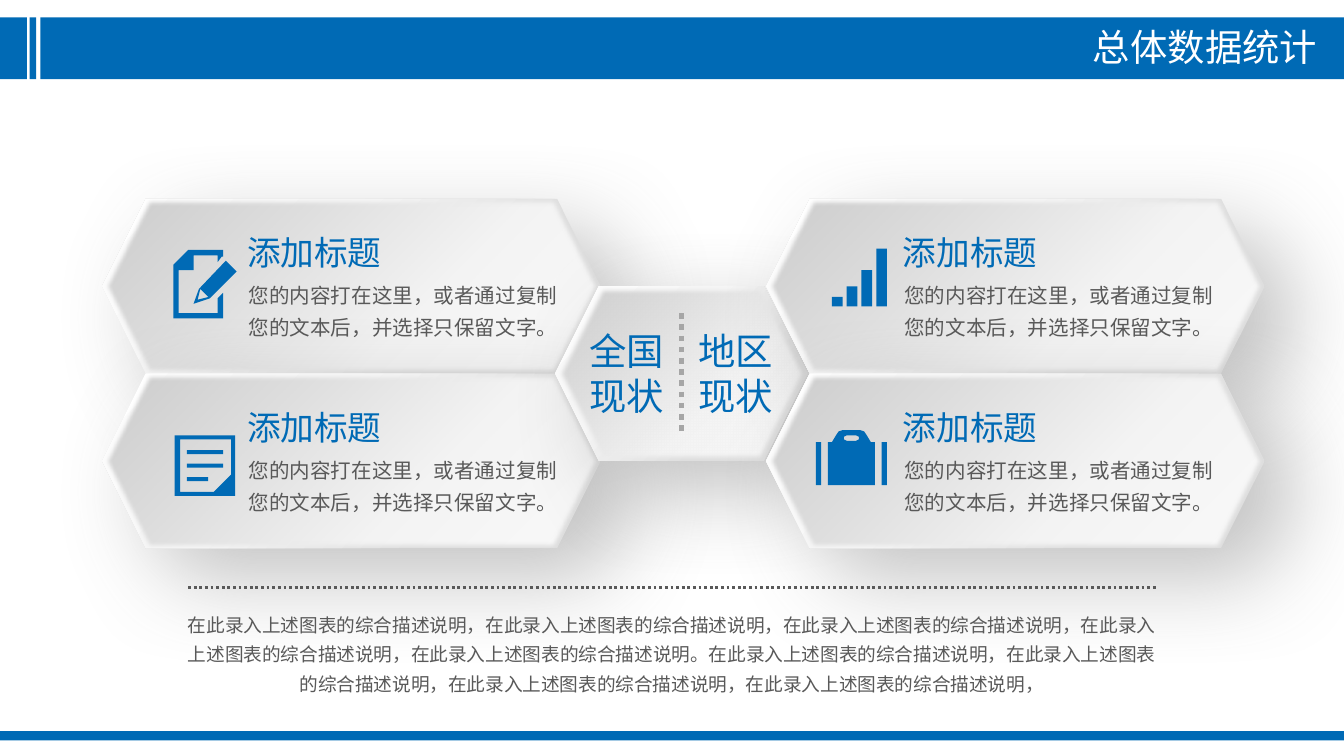
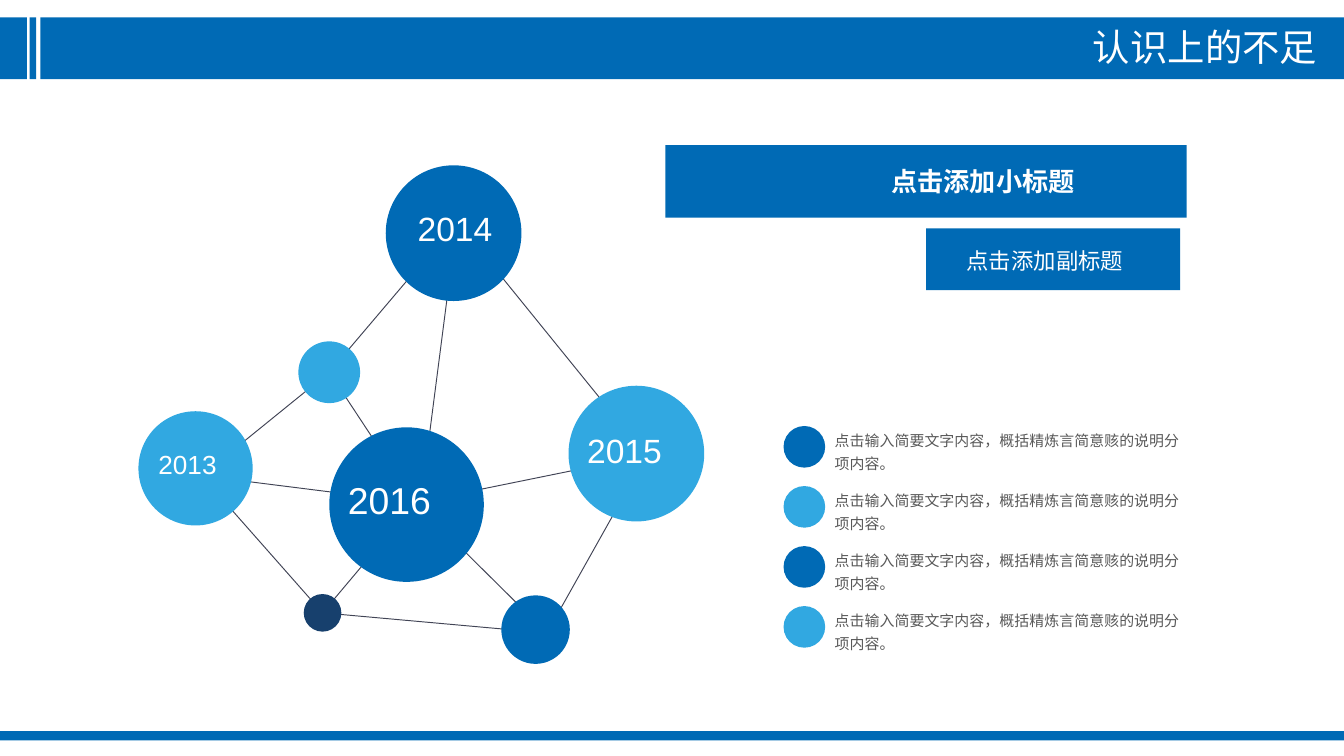
from lxml import etree
from pptx import Presentation, oxml
from pptx import util as u
from pptx.dml.color import RGBColor
from pptx.enum import dml, shapes, text
from pptx.oxml import ns

BLUE, SKY, NAVY = "006AB5", "31A8E1", "17406D"
WHITE, GREY, DOTS, INK = "FFFFFF", "595959", "A6A6A6", "414455"
FONT = "Arial"
SNUG = (0.07, 0.04, 0.07, 0.04)
KIND = shapes.MSO_SHAPE
ALIGN = text.PP_ALIGN

RIM = [(1, "DEDEDE"), (30, "E0E0E0"), (61, "F6F6F6"), (100, "FFFFFF")]
FACE = [(0, "CBCBCB"), (32, "DEDEDE"), (64, "F3F3F3"), (100, "F9F9F9")]

CARD = "您的内容打在这里，或者通过复制您的文本后，并选择只保留文字。"
POINT = "点击输入简要文字内容，概括精炼言简意赅的说明分项内容。"
CLAUSE = "在此录入上述图表的综合描述说明"
SUMMARY = "，".join([CLAUSE] * 5) + "。" + (CLAUSE + "，") * 4


def rgb(code):
    return RGBColor.from_string(code)


def inches(*sizes):
    return [u.Inches(size) for size in sizes]


def paint(shape, color):
    shape.shadow.inherit = False
    shape.fill.solid()
    shape.fill.fore_color.rgb = rgb(color)
    shape.line.fill.background()
    return shape


def block(slide, x, y, w, h, color=BLUE, kind=KIND.RECTANGLE):
    return paint(slide.shapes.add_shape(kind, *inches(x, y, w, h)), color)


def dot(slide, x, y, size, color):
    return block(slide, x, y, size, size, color, KIND.OVAL)


def outline(slide, x, y, *loops):
    """Fill closed loops of points, given relative to x, y; inner loops are holes."""
    loops = [[inches(x + px, y + py) for px, py in loop] for loop in loops]
    pen = slide.shapes.build_freeform(*loops[0][0], scale=1.0)
    pen.add_line_segments(loops[0][1:])
    for loop in loops[1:]:
        pen.move_to(*loop[0])
        pen.add_line_segments(loop[1:])
    return paint(pen.convert_to_shape(), BLUE)


def rule(slide, start, end, color, width, dash=None):
    line = slide.shapes.add_connector(
        shapes.MSO_CONNECTOR.STRAIGHT, *inches(*start, *end))
    line.line.color.rgb = rgb(color)
    line.line.width = u.Pt(width)
    if dash:
        line.line.dash_style = dash
    etree.SubElement(line._element.spPr, ns.qn("a:effectLst"))


def label(slide, x, y, w, h, words, size, color, align=ALIGN.LEFT,
          inset=(0.1, 0.05, 0.1, 0.05), space=None, bold=False,
          wrap=True, grow=True):
    frame = slide.shapes.add_textbox(*inches(x, y, w, h)).text_frame
    frame.word_wrap = wrap
    sizing = text.MSO_AUTO_SIZE
    frame.auto_size = sizing.SHAPE_TO_FIT_TEXT if grow else sizing.NONE
    (frame.margin_left, frame.margin_top,
     frame.margin_right, frame.margin_bottom) = inches(*inset)
    para = frame.paragraphs[0]
    para.alignment = align
    if space:
        para.line_spacing = space
    run = para.add_run()
    run.text = words
    run.font.name = FONT
    run.font.size = u.Pt(size)
    run.font.bold = bold
    run.font.color.rgb = rgb(color)


def page(deck, title):
    """Add a slide with the shared header band, title and footer."""
    slide = deck.slides.add_slide(deck.slide_layouts[6])
    for x, w in ((0.3, 9.7), (0, 0.2), (0.22, 0.05)):
        block(slide, x, 0.13, w, 0.46)
    block(slide, 0, 5.44, 10, 0.07)
    label(slide, 5.63, 0.13, 4.27, 0.44, title, 20, WHITE, ALIGN.RIGHT)
    return slide


def blend(shape, stops, angle):
    """Replace the fill with a linear gradient."""
    marks = "".join(
        f'<a:gs pos="{pos * 1000}"><a:srgbClr val="{color}"/></a:gs>'
        for pos, color in stops)
    grad = oxml.parse_xml(
        f'<a:gradFill {ns.nsdecls("a")} rotWithShape="1"><a:gsLst>{marks}</a:gsLst>'
        f'<a:lin ang="{angle * 60000}" scaled="0"/></a:gradFill>')
    props = shape._element.spPr
    props.replace(props.find(ns.qn("a:solidFill")), grad)


def effect(shape, tag, body="", **attrs):
    pairs = " ".join(f'{key}="{val}"' for key, val in attrs.items())
    node = oxml.parse_xml(f'<a:{tag} {ns.nsdecls("a")} {pairs}>{body}</a:{tag}>')
    shape._element.spPr.find(ns.qn("a:effectLst")).append(node)


def plate(slide, x, y, w, h=1.3):
    """Draw a raised hexagon: a shadowed rim under a soft-edged face."""
    rim = block(slide, x, y, w, h, WHITE, KIND.HEXAGON)
    blend(rim, RIM, 225)
    effect(rim, "outerShdw",
           '<a:srgbClr val="696969"><a:alpha val="40000"/></a:srgbClr>',
           blurRad=u.Pt(49), dist=u.Pt(25), dir=40 * 60000,
           algn="tl", rotWithShape=0)
    face = block(slide, x, y, w, h, WHITE, KIND.HEXAGON)
    blend(face, FACE, 45)
    effect(face, "softEdge", rad=u.Pt(2.5))


def pencil(slide, x, y):
    outline(slide, x, y, [
        (0.33, 0.47), (0.04, 0.47), (0.04, 0.15), (0.15, 0.15), (0.15, 0.04),
        (0.33, 0.04), (0.33, 0.09), (0.36, 0.05), (0.37, 0.05), (0.37, 0),
        (0.11, 0), (0, 0.11), (0, 0.51), (0.37, 0.51), (0.37, 0.32),
        (0.33, 0.36)])
    outline(slide, x, y,
            [(0.19, 0.29), (0.15, 0.4), (0.27, 0.36), (0.47, 0.16), (0.39, 0.08)],
            [(0.26, 0.35), (0.18, 0.37), (0.2, 0.29)])


def note(slide, x, y):
    outline(slide, x, y,
            [(0, 0), (0, 0.45), (0.45, 0.45), (0.45, 0)],
            [(0.04, 0.03), (0.42, 0.03), (0.42, 0.29), (0.29, 0.42), (0.04, 0.42)])
    for row, w in enumerate((0.27, 0.27, 0.16)):
        block(slide, x + 0.09, y + 0.11 + row * 0.1, w, 0.03)


def bars(slide, x, y):
    for col, h in enumerate((0.07, 0.15, 0.27, 0.43)):
        block(slide, x + col * 0.11, y + 0.43 - h, 0.08, h)


def case(slide, x, y):
    for side in (0, 0.49):
        block(slide, x + side, y + 0.09, 0.04, 0.32)
    outline(slide, x + 0.09, y,
            [(0, 0.09), (0, 0.41), (0.35, 0.41), (0.35, 0.09), (0.32, 0.09),
             (0.29, 0.04), (0.27, 0.01), (0.24, 0), (0.11, 0), (0.08, 0.01),
             (0.06, 0.04), (0.03, 0.09)],
            [(0.14, 0.08), (0.21, 0.08), (0.23, 0.07), (0.23, 0.05),
             (0.21, 0.04), (0.14, 0.04), (0.12, 0.05), (0.12, 0.07)])


def blurb(slide, x, y):
    label(slide, x, y, 1.21, 0.4, "添加标题", 18, BLUE, wrap=False)
    label(slide, x + 0.11, y + 0.37, 2.44, 0.51, CARD, 11, GREY,
          inset=(0, 0, 0.1, 0.05), space=1.3)


def status(slide, x, y):
    """Fill the middle hexagon with two headings and a divider."""
    rule(slide, (x + 0.94, y + 0.2), (x + 0.94, y + 1.09), DOTS, 3,
         dml.MSO_LINE.ROUND_DOT)
    for shift, words in ((0.05, "全国现状"), (0.86, "地区现状")):
        label(slide, x + shift, y + 0.27, 0.97, 0.75, words, 20, BLUE,
              ALIGN.CENTER, SNUG)


def overview(deck):
    slide = page(deck, "总体数据统计")
    left, right, top, low = 0.76, 5.7, 1.48, 2.78
    for x, y, w in ((left, top, 3.71), (left, low, 3.71), (4.13, 2.13, 1.88),
                    (right, top, 3.71), (right, low, 3.71)):
        plate(slide, x, y, w)
    status(slide, 4.13, 2.13)
    bars(slide, right + 0.49, top + 0.37)
    case(slide, right + 0.37, low + 0.42)
    note(slide, left + 0.54, low + 0.46)
    pencil(slide, left + 0.53, top + 0.38)
    for x in (left + 0.98, right + 0.92):
        for y in (top, low):
            blurb(slide, x, y + 0.2)
    label(slide, 1.3, 4.47, 7.39, 0.76, SUMMARY, 10, GREY, ALIGN.CENTER, space=1.3)
    rule(slide, (1.4, 4.37), (8.6, 4.37), GREY, 1.5, dml.MSO_LINE.ROUND_DOT)


def network(slide, x, y):
    """Draw the linked circles of the years."""
    hubs = {"2013": (0.47, 2.31), "2014": (2.37, 0.42), "2015": (3.78, 2.16),
            "2016": (2.06, 2.51), "peak": (2.1, 2.51), "sky": (1.42, 1.54),
            "navy": (1.37, 3.33), "blue": (3.04, 3.48)}
    links = (("2013", "sky navy 2016"), ("2014", "sky 2015 peak"),
             ("blue", "navy 2015 2016"), ("2016", "sky navy 2015"))
    for start, ends in links:
        for end in ends.split():
            (ax, ay), (bx, by) = hubs[start], hubs[end]
            rule(slide, (x + ax, y + ay), (x + bx, y + by), INK, 0.5)
    for dx, dy, size, color in (
            (1.42, 1.95, 1.15, BLUE), (0, 1.83, 0.85, SKY),
            (2.7, 3.2, 0.51, BLUE), (1.84, 0, 1.01, BLUE),
            (1.23, 3.19, 0.28, NAVY), (3.2, 1.64, 1.01, SKY),
            (1.19, 1.31, 0.46, SKY)):
        dot(slide, x + dx, y + dy, size, color)
    for year, dx, dy, w, size, align in (
            ("2014", 1.86, 0.27, 0.99, 18, ALIGN.CENTER),
            ("2015", 3.24, 1.92, 1, 18, ALIGN.LEFT),
            ("2013", 0.05, 2.06, 0.82, 14, ALIGN.LEFT),
            ("2016", 1.46, 2.27, 1.15, 20, ALIGN.LEFT)):
        label(slide, x + dx, y + dy, w, 0.4, year, size, WHITE, align)


def heads(slide, x, y):
    block(slide, x, y, 3.88, 0.54)
    label(slide, x + 0.57, y + 0.1, 3.59, 0.29, "点击添加小标题", 14, WHITE,
          ALIGN.CENTER, bold=True, grow=False)
    block(slide, x + 1.94, y + 0.62, 1.89, 0.46)
    label(slide, x + 1.99, y + 0.71, 1.67, 0.29, "点击添加副标题", 12, WHITE,
          ALIGN.CENTER, grow=False)


def points(slide, x, y, h, count=4):
    """Spread the bullet rows evenly over the height h."""
    for row in range(count):
        top = y + row * (h - 0.31) / (count - 1)
        dot(slide, x, top, 0.31, (BLUE, SKY)[row % 2])
        label(slide, x + 0.31, top - 0.04, 2.75, 0.41, POINT, 8, GREY,
              inset=SNUG, space=1.3)


def gaps(deck):
    slide = page(deck, "认识上的不足")
    network(slide, 1.03, 1.23)
    heads(slide, 4.95, 1.08)
    points(slide, 5.83, 3.17, 1.65)


def main():
    deck = Presentation()
    deck.slide_width = u.Inches(10)
    deck.slide_height = deck.slide_width * 9 // 16
    overview(deck)
    gaps(deck)
    deck.save("out.pptx")


if __name__ == "__main__":
    main()
